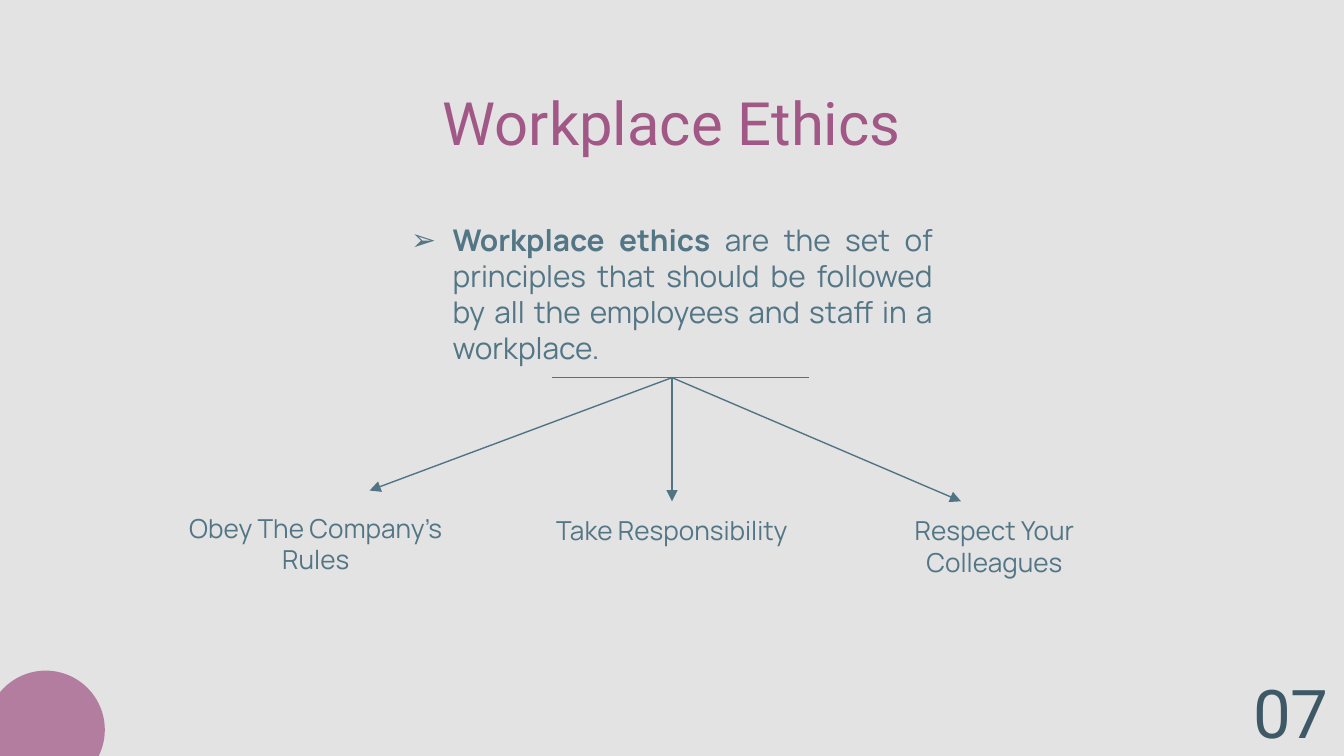
from pptx import Presentation
from pptx.dml.color import RGBColor
from pptx.enum.shapes import MSO_CONNECTOR, MSO_SHAPE
from pptx.enum.text import MSO_ANCHOR, MSO_AUTO_SIZE, PP_ALIGN
from pptx.oxml.ns import qn
from pptx.util import Inches, Pt
from lxml import etree

LINE = MSO_CONNECTOR.STRAIGHT
OVAL = MSO_SHAPE.OVAL
TOP, MIDDLE = MSO_ANCHOR.TOP, MSO_ANCHOR.MIDDLE
CENTER, JUSTIFY = PP_ALIGN.CENTER, PP_ALIGN.JUSTIFY
NONE = MSO_AUTO_SIZE.NONE

HEX = {"back": "E3E3E3", "plum": "A15887", "text": "537686",
       "line": "507484", "dark": "3E5965"}
INK = {name: RGBColor.from_string(code) for name, code in HEX.items()}


def write(box, runs, font, size, ink, align=CENTER, anchor=TOP):
    frame = box.text_frame
    frame.word_wrap = True
    frame.auto_size = NONE
    frame.vertical_anchor = anchor
    frame.margin_left = frame.margin_right = Inches(0.1)
    frame.margin_top = frame.margin_bottom = Inches(0.1)
    para = frame.paragraphs[0]
    para.alignment = align
    for text, bold in runs:
        run = para.add_run()
        run.text = text
        run.font.name = font
        run.font.size = Pt(size)
        run.font.bold = bold
        run.font.color.rgb = INK[ink]
    return para


def draw(x1, y1, x2, y2, arrow=True):
    link = slide.shapes.add_connector(
        LINE, Inches(x1), Inches(y1), Inches(x2), Inches(y2))
    link.line.color.rgb = INK["line"]
    link.line.width = Pt(0.75)
    if arrow:
        etree.SubElement(link.line._get_or_add_ln(), qn("a:tailEnd"), type="triangle")
    etree.SubElement(link._element.spPr, qn("a:effectLst"))
    return link


deck = Presentation()
deck.slide_width = Inches(10)
deck.slide_height = Inches(10) * 9 // 16
slide = deck.slides.add_slide(deck.slide_layouts[5])
slide.background.fill.solid()
slide.background.fill.fore_color.rgb = INK["back"]

disc = slide.shapes.add_shape(
    OVAL, Inches(-0.1), Inches(4.99), Inches(0.88), Inches(0.88))
disc.shadow.inherit = False
disc.fill.solid()
disc.fill.fore_color.rgb = INK["plum"]
disc.line.fill.background()
color = disc._element.spPr.find(qn("a:solidFill"))[0]
etree.SubElement(color, qn("a:alpha"), val="73000")

title = slide.shapes.title
title.left, title.top = Inches(2.85), Inches(0.45)
title.width, title.height = Inches(4.3), Inches(0.91)
write(title, [("Workplace Ethics", False)], "Roboto", 32, "plum", anchor=MIDDLE)

intro = slide.shapes.add_textbox(
    Inches(2.96), Inches(1.55), Inches(4.08), Inches(1.26))
para = write(intro, [
    ("Workplace ethics ", True),
    ("are the set of principles that should be followed by all the "
     "employees and staff in a workplace.", False),
], "Manrope", 16, "text", JUSTIFY)
props = para._p.get_or_add_pPr()
props.set("marL", str(Inches(0.31)))
props.set("indent", str(Inches(-0.31)))
tint = etree.SubElement(props, qn("a:buClr"))
etree.SubElement(tint, qn("a:srgbClr"), val=HEX["text"])
etree.SubElement(props, qn("a:buFont"), typeface="Manrope")
etree.SubElement(props, qn("a:buChar"), char="➢")

page = slide.shapes.add_textbox(
    Inches(9.21), Inches(4.96), Inches(0.79), Inches(0.67))
write(page, [("07", False)], "Roboto", 36, "dark", anchor=MIDDLE)

draw(4.11, 2.81, 6.02, 2.81, arrow=False)

rules = [
    ("Obey The Company’s Rules", 1.15, 3.71, 2.75, 3.65),
    ("Take Responsibility", 3.8, 3.73, 5, 3.73),
    ("Respect Your Colleagues", 6.2, 3.73, 7.15, 3.73),
]
for text, left, top, tip_x, tip_y in rules:
    label = slide.shapes.add_textbox(
        Inches(left), Inches(top), Inches(2.4), Inches(0.65))
    write(label, [(text, False)], "Manrope", 14, "text")
    arrow = draw(5, 2.81, tip_x, tip_y)
    arrow.begin_connect(intro, 2)
    if tip_x == 5:
        arrow.end_connect(label, 0)

deck.save("out.pptx")
